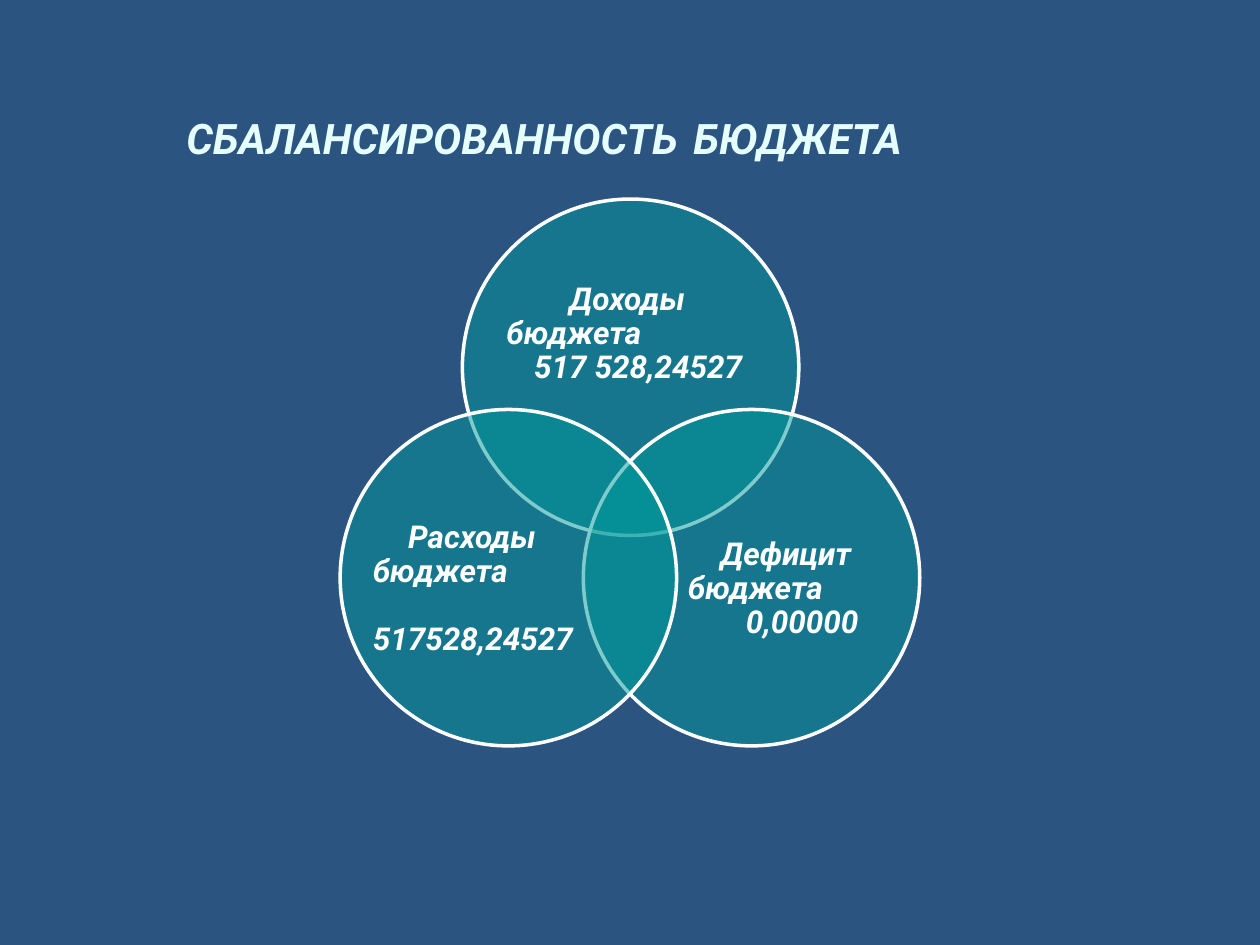
from lxml.etree import SubElement
from pptx import Presentation
from pptx.dml.color import RGBColor
from pptx.enum.shapes import MSO_SHAPE
from pptx.enum.text import MSO_ANCHOR, PP_ALIGN
from pptx.oxml.ns import qn
from pptx.util import Inches, Pt

NAVY = RGBColor(0x2B, 0x54, 0x81)
TEAL = RGBColor(0x00, 0x99, 0x99)
WHITE = RGBColor(0xFF, 0xFF, 0xFF)
PALE = RGBColor(0xE5, 0xFF, 0xFF)
DIAMETER = Inches(2.67)


def format_font(font, size, color):
    values = {"name": "Roboto", "size": Pt(size), "bold": True, "italic": True}
    for name, value in values.items():
        setattr(font, name, value)
    font.color.rgb = color


presentation = Presentation()
presentation.slide_width = Inches(10)
presentation.slide_height = Inches(7.5)
slide = presentation.slides.add_slide(presentation.slide_layouts[6])
slide.background.fill.solid()
slide.background.fill.fore_color.rgb = NAVY

# (line, left indent in inches, space before in points)
circles = [
    ((3.67, 1.58), (4.02, 2.05, 1.96, 1.2),
     [("Доходы", 0.5, 0), ("бюджета", 0, 0), ("517 528,24527", 0.22, 0)]),
    ((4.63, 3.25), (5.44, 3.94, 1.6, 1.47),
     [("Дефицит", 0.28, 0), ("бюджета", 0.02, 0), ("0,00000", 0.48, 0)]),
    ((2.7, 3.25), (2.96, 3.94, 1.6, 1.47),
     [("Расходы", 0.28, 0), ("бюджета", 0, 0), ("517528,24527", 0, 19.4)]),
]

for (left, top), label_box, lines in circles:
    circle = slide.shapes.add_shape(
        MSO_SHAPE.OVAL, Inches(left), Inches(top), DIAMETER, DIAMETER)
    circle.shadow.inherit = False
    circle.fill.solid()
    circle.fill.fore_color.rgb = TEAL
    color_element = circle._element.spPr.find(qn("a:solidFill"))[0]
    SubElement(color_element, qn("a:alpha"), val="50000")
    circle.line.color.rgb = WHITE
    circle.line.width = Pt(2)

    label = slide.shapes.add_textbox(*[Inches(length) for length in label_box])
    frame = label.text_frame
    frame_format = {"word_wrap": True, "vertical_anchor": MSO_ANCHOR.MIDDLE,
                    "margin_left": 0, "margin_right": 0,
                    "margin_top": 0, "margin_bottom": 0}
    for name, value in frame_format.items():
        setattr(frame, name, value)
    for index, (text, indent, space_before) in enumerate(lines):
        paragraph = frame.paragraphs[0] if index == 0 else frame.add_paragraph()
        paragraph.alignment = PP_ALIGN.LEFT
        paragraph.line_spacing = 0.9
        if space_before:
            paragraph.space_before = Pt(space_before)
        paragraph._p.get_or_add_pPr().set("marL", str(Inches(indent)))
        run = paragraph.add_run()
        run.text = text
        format_font(run.font, 18, WHITE)

title = slide.shapes.add_textbox(Inches(1.38), Inches(0.84), Inches(6.51), Inches(0.5))
title.text_frame.word_wrap = True
paragraph = title.text_frame.paragraphs[0]
paragraph.alignment = PP_ALIGN.LEFT
for text, spacing in [("СБАЛАНСИРОВАННОСТЬ", 0), (" ", 300), ("БЮДЖЕТА", 0)]:
    run = paragraph.add_run()
    run.text = text
    format_font(run.font, 24, PALE)
    run._r.get_or_add_rPr().set("spc", str(spacing))

presentation.save("out.pptx")
